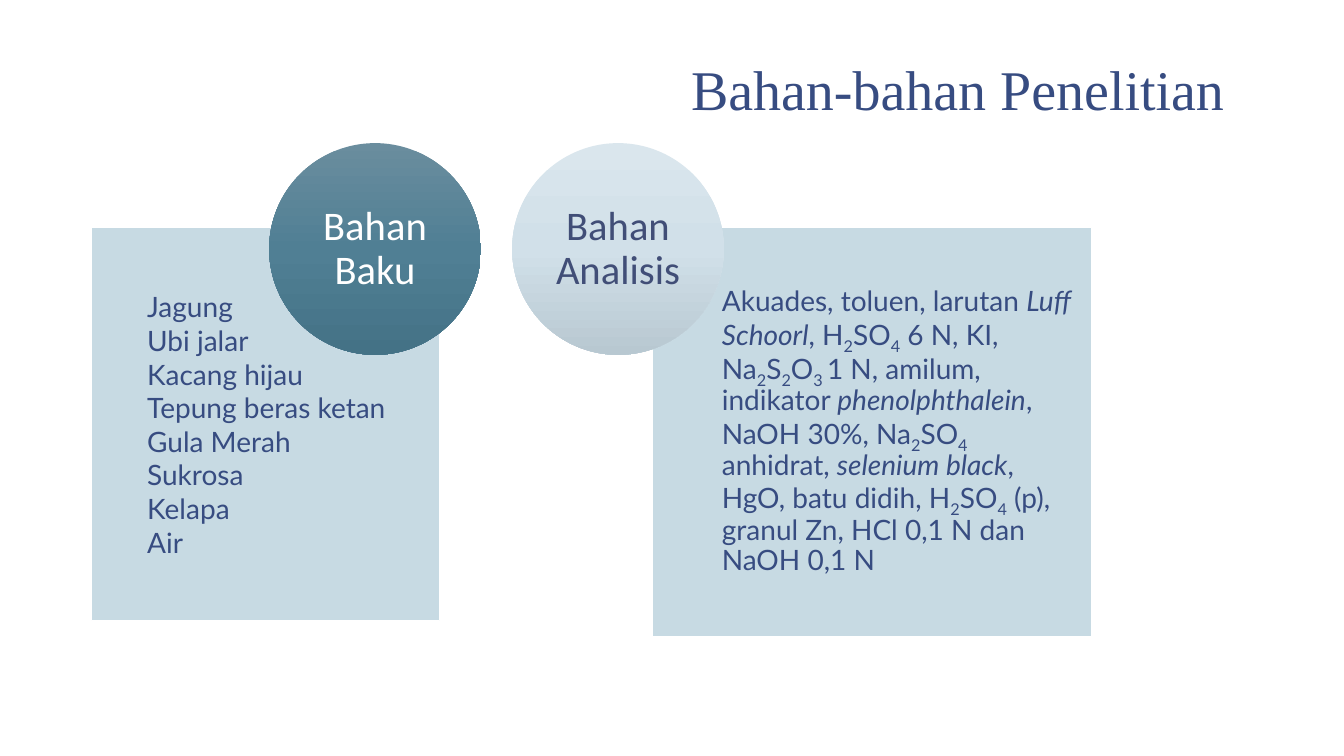
from copy import deepcopy
from pptx import Presentation
from pptx.dml.color import RGBColor as Rgb
from pptx.enum.shapes import MSO_SHAPE as Kind
from pptx.enum.text import MSO_ANCHOR as Anchor, PP_ALIGN as Align
from pptx.oxml import parse_xml
from pptx.oxml.ns import nsdecls, qn
from pptx.util import Inches, Pt

HUES = {
    "ink": "374C81", "white": "FFFFFF", "panel": "C2D6E1", "slate": "414E77",
    "dark": ["6A8D9E", "507F94", "447286"],
    "pale": ["DAE6ED", "D1E0E9", "B8C8D1"],
}
RAW = ["Jagung", "Ubi jalar", "Kacang hijau", "Tepung beras ketan",
       "Gula Merah", "Sukrosa", "Kelapa", "Air"]
# Pieces split by "|": "~" marks a subscript, "^" marks italics
TEST = ["Akuades, toluen, larutan |^Luff Schoorl|, H|~2|SO|~4| 6 N, KI, Na|~2|S|~2"
        "|O|~3 |1 N, amilum, indikator |^phenolphthalein|, NaOH 30%, Na|~2|SO|~4 "
        "|anhidrat, |^selenium black|, HgO, batu didih, H|~2|SO|~4"
        "| (p), granul Zn, HCl 0,1 N dan NaOH 0,1 N"]


def write(frame, lines, font="Lato", size=20, hue="ink", align=Align.LEFT, gap=None):
    for i, line in enumerate(lines):
        para = frame.add_paragraph() if i else frame.paragraphs[0]
        para.alignment = align
        if gap:
            para.line_spacing = gap
        for piece in line.split("|"):
            run = para.add_run()
            run.text = piece.lstrip("~^")
            run.font.name, run.font.size = font, Pt(size)
            run.font.color.rgb = Rgb.from_string(HUES[hue])
            if piece.startswith("^"):
                run.font.italic = True
            if piece.startswith("~"):
                run.font._element.set("baseline", "-25000")


class Deck:
    def __init__(self):
        self.show = Presentation()
        self.show.slide_width, self.show.slide_height = Inches(13.33), Inches(7.5)
        self.slide = self.show.slides.add_slide(self.show.slide_layouts[6])

    def text(self, box, lines, pad=(0, 0, 0, 0), anchor=Anchor.MIDDLE, **style):
        area = self.slide.shapes.add_textbox(*map(Inches, box))
        frame = area.text_frame
        frame.word_wrap = True
        frame.vertical_anchor = anchor
        (frame.margin_left, frame.margin_top,
         frame.margin_right, frame.margin_bottom) = map(Inches, pad)
        write(frame, lines, **style)

    def shape(self, kind, box):
        item = self.slide.shapes.add_shape(kind, *map(Inches, box))
        item.shadow.inherit = False
        return item

    def panel(self, x, wide, high, inset, lines, **style):
        top = 2.26
        item = self.shape(Kind.RECTANGLE, (x, top, wide, high))
        item.fill.solid()
        item.fill.fore_color.rgb = Rgb.from_string(HUES["panel"])
        tone = item._element.spPr.find(qn("a:solidFill"))[0]
        tone.append(parse_xml(f'<a:alpha {nsdecls("a")} val="90000"/>'))
        item.line.color.rgb = Rgb.from_string(HUES["white"])
        item.line.width = Pt(0.5)
        self.text((x + inset, top, wide - inset, high), lines,
                  pad=(0, 0.16, 0.16, 0.16), **style)

    def disc(self, x, label, fill, hue):
        top, size, inset = 1.42, 2.1, 0.305
        item = self.shape(Kind.OVAL, (x, top, size, size))
        item.line.fill.background()
        item.fill.gradient()
        item.fill.gradient_angle = 270
        stops = item._element.spPr.find(qn("a:gradFill")).find(qn("a:gsLst"))
        stops.insert(1, deepcopy(stops[0]))
        for i, stop in enumerate(item.fill.gradient_stops):
            stop.position = i / 2
            stop.color.rgb = Rgb.from_string(HUES[fill][i])
        side = size - 2 * inset
        self.text((x + inset, top + inset, side, side), [label], font="Calibri",
                  size=29, hue=hue, align=Align.CENTER, gap=0.9)


def main():
    deck = Deck()
    # Raw materials
    deck.panel(0.91, 3.45, 3.9, 0.55, RAW)
    deck.disc(2.67, "Bahan Baku", "dark", "white")
    # Analysis materials
    deck.panel(6.47, 4.36, 4.05, 0.69, TEST, gap=0.9)
    deck.disc(5.08, "Bahan Analisis", "pale", "slate")
    # Title
    deck.text((1.16, 0.42, 11.11, 0.86), ["Bahan-bahan Penelitian"],
              pad=(0.13, 0.07, 0.13, 0.07), anchor=Anchor.BOTTOM,
              font="Times New Roman", size=40, align=Align.RIGHT, gap=0.85)
    deck.show.save("out.pptx")


if __name__ == "__main__":
    main()
